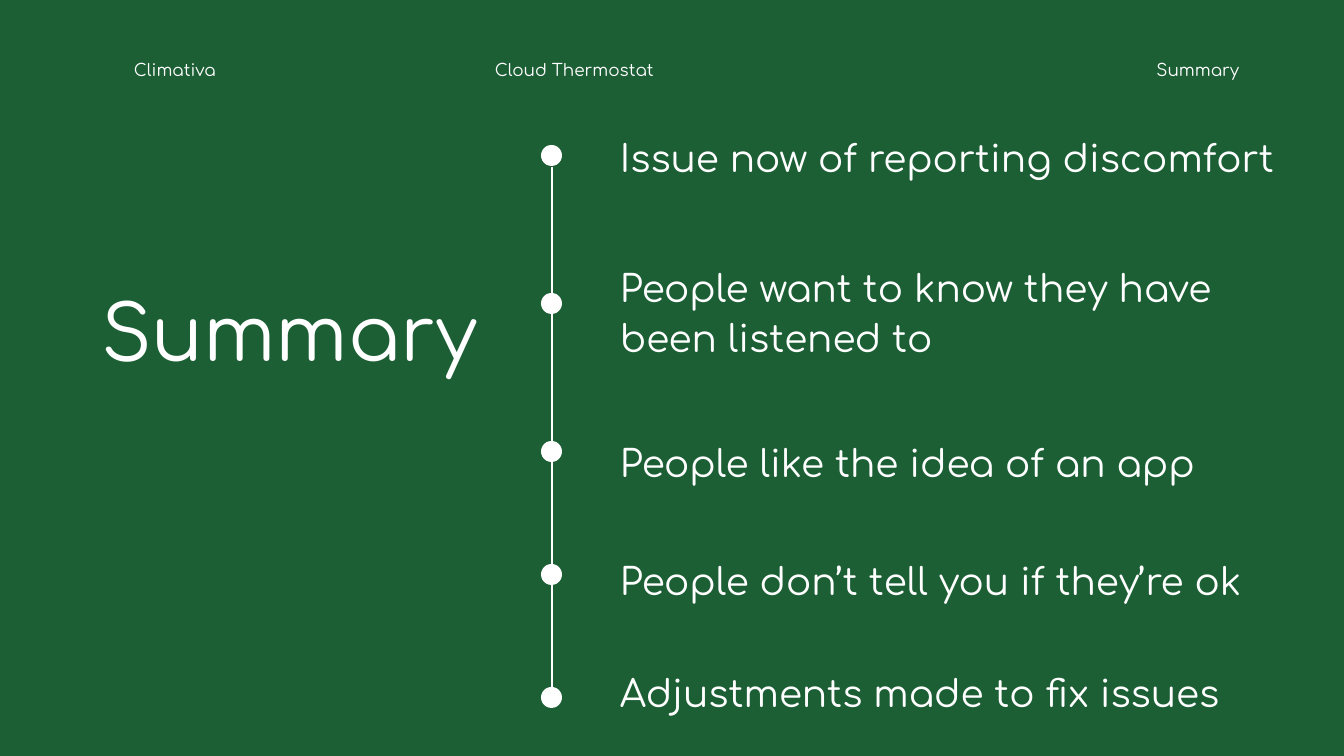
from pptx import Presentation
from pptx.dml.color import RGBColor
from pptx.enum.shapes import MSO_CONNECTOR, MSO_SHAPE
from pptx.enum.text import MSO_AUTO_SIZE, PP_ALIGN
from pptx.oxml.ns import qn
from pptx.util import Pt
from lxml.etree import SubElement

PX = 914400 / 134.4
GREEN = RGBColor(0x1C, 0x5F, 0x35)
WHITE = RGBColor(0xFF, 0xFF, 0xFF)
FONT = "Comfortaa"


def px(*lengths):
    return [round(length * PX) for length in lengths]


def add_text(page, text, bounds, size, spacing, align=PP_ALIGN.LEFT):
    box = page.shapes.add_textbox(*px(*bounds))
    frame = box.text_frame
    frame.margin_left = frame.margin_right = 0
    frame.margin_top = frame.margin_bottom = 0
    frame.word_wrap = True
    frame.auto_size = MSO_AUTO_SIZE.SHAPE_TO_FIT_TEXT
    para = frame.paragraphs[0]
    para.text = text
    para.alignment = align
    para.line_spacing = spacing
    para.font.name = FONT
    para.font.size = Pt(size)
    para.font.color.rgb = WHITE


deck = Presentation()
deck.slide_width, deck.slide_height = px(1344, 756)
page = deck.slides.add_slide(deck.slide_layouts[6])
page.background.fill.solid()
page.background.fill.fore_color.rgb = GREEN

headers = [
    ("Climativa", 134, 259, PP_ALIGN.LEFT),
    ("Cloud Thermostat", 495, 202, PP_ALIGN.LEFT),
    ("Summary", 961, 278, PP_ALIGN.RIGHT),
]
for text, left, width, align in headers:
    add_text(page, text, (left, 52, width, 20), 9, 1.4, align)

add_text(page, "Summary", (101, 290, 571, 90), 41, 0.97)

timeline = page.shapes.add_connector(MSO_CONNECTOR.STRAIGHT, *px(552, 706, 552, 167))
timeline.line.color.rgb = WHITE
timeline.line.width = Pt(1.5)
SubElement(timeline._element.spPr, qn("a:effectLst"))

points = [
    ("Issue now of reporting discomfort", 155, 129, 711, 46),
    ("People want to know they have been listened to", 303, 259, 694, 97),
    ("People like the idea of an app", 451, 434, 694, 46),
    ("People don’t tell you if they’re ok", 574, 552, 637, 46),
    ("Adjustments made to fix issues", 697, 664, 626, 46),
]
for text, dot_middle, top, width, height in points:
    dot = page.shapes.add_shape(MSO_SHAPE.OVAL, *px(541, dot_middle - 10, 21, 21))
    dot.shadow.inherit = False
    dot.fill.solid()
    dot.fill.fore_color.rgb = WHITE
    dot.line.fill.background()
    add_text(page, text, (620, top, width, height), 20, 1.13)

deck.save("out.pptx")
